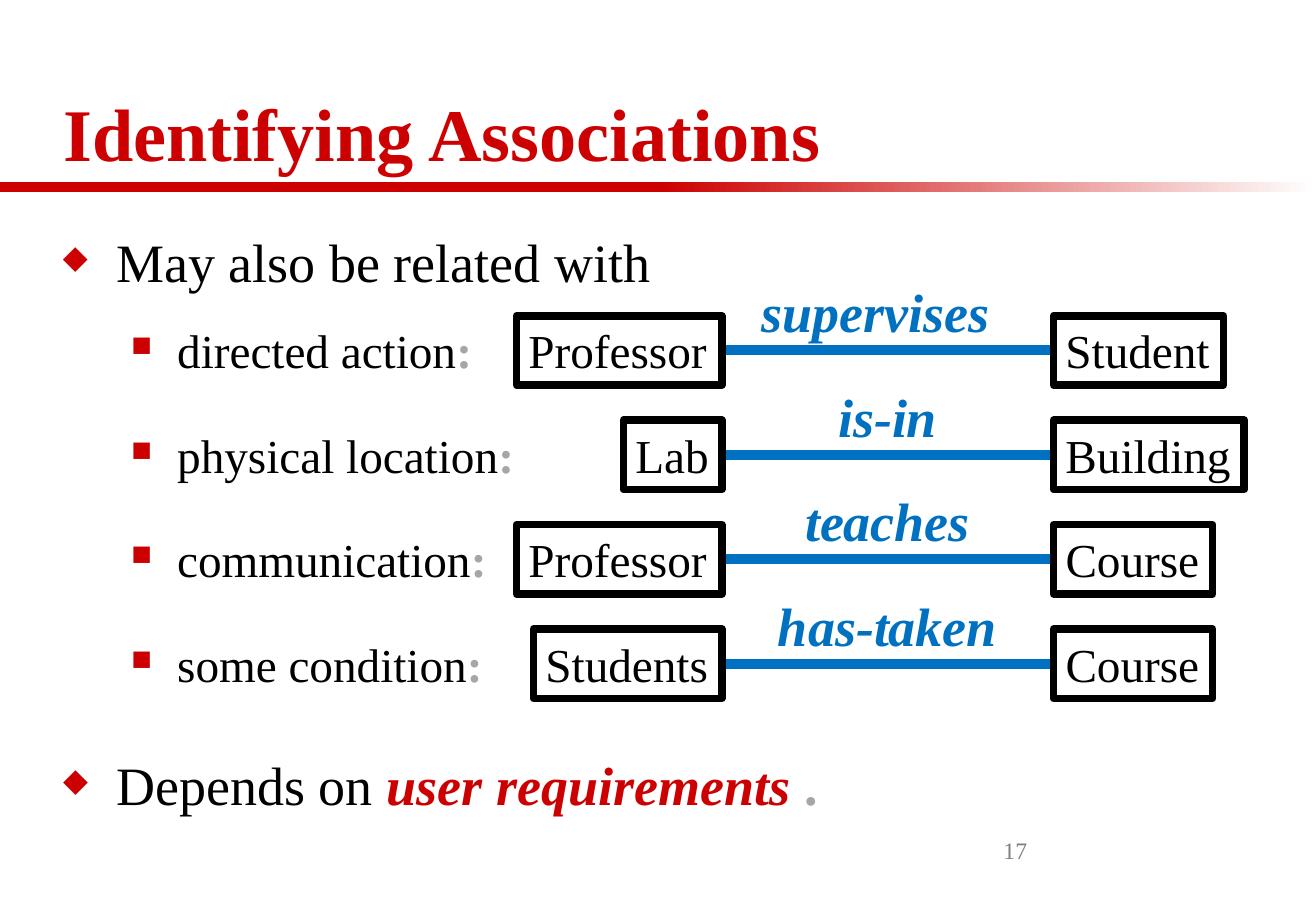
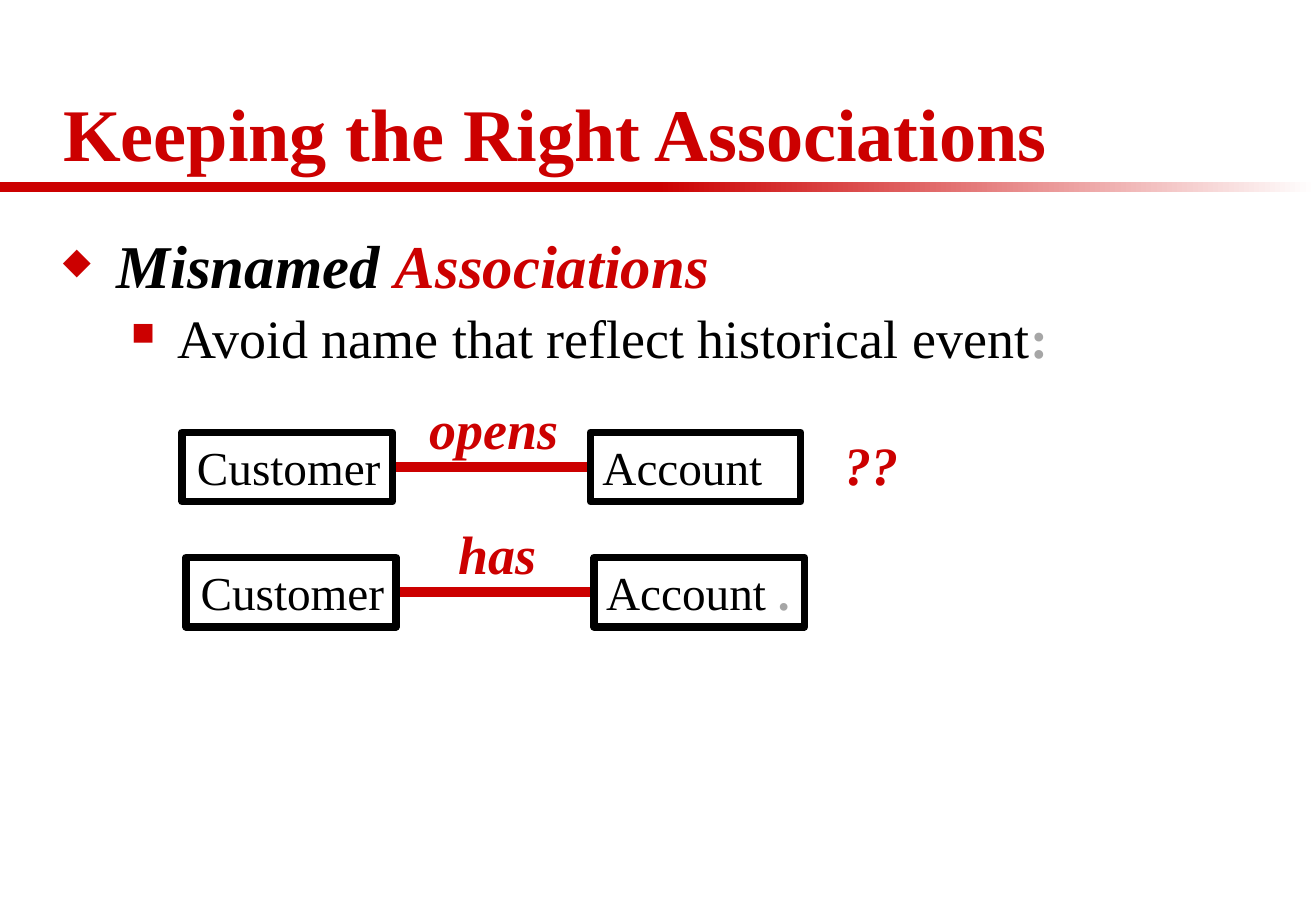
"""Build two slides on naming the associations between classes."""
from lxml.etree import SubElement as Sub
from pptx import Presentation as Deck
from pptx.dml.color import RGBColor as Rgb
from pptx.enum.shapes import MSO_CONNECTOR as Conn, MSO_SHAPE as Kind
from pptx.enum.text import MSO_ANCHOR as Anchor, MSO_AUTO_SIZE as Fit, PP_ALIGN as Align
from pptx.oxml.ns import qn
from pptx.util import Inches, Pt

W, H = 10.83, 7.5
EDGE = 0.42
RULE = H / 5
BOX_H = 0.57
TAG_H = 0.64
FONT = "Times New Roman"
HUES = {"red": "CC0000", "blue": "0070C0", "ink": "000000",
        "mute": "A6A6A6", "page": "808080", "white": "FFFFFF"}
LOOKS = {"text": ("ink", False, False), "head": ("red", True, False),
         "mark": ("mute", True, False), "page": ("page", False, False),
         "name": ("ink", True, True), "red": ("red", True, True),
         "blue": ("blue", True, True)}
MARKS = [("◆", 0.44, -0.44), ("■", 0.94, -0.38)]


def hue(key):
    return Rgb.from_string(HUES[key])


def place(*nums):
    return [Inches(n) for n in nums]


def write(para, size, runs):
    for text, look in runs:
        run = para.add_run()
        run.text = text
        font = run.font
        font.name, font.size = FONT, Pt(size)
        key, font.bold, font.italic = LOOKS[look]
        font.color.rgb = hue(key)


def label(slide, spot, size, runs, align=Align.LEFT, anchor=Anchor.TOP):
    frame = slide.shapes.add_textbox(*place(*spot)).text_frame
    frame.word_wrap = True
    frame.vertical_anchor = anchor
    para = frame.paragraphs[0]
    para.alignment = align
    write(para, size, runs)


def bullet(para, level):
    sign, left, hang = MARKS[level]
    props = para._p.get_or_add_pPr()
    props.set("marL", str(Inches(left)))
    props.set("indent", str(Inches(hang)))
    tint = Sub(props, qn("a:buClr"))
    Sub(tint, qn("a:srgbClr"), val=HUES["red"])
    Sub(props, qn("a:buSzPct"), val="60000")
    Sub(props, qn("a:buChar"), char=sign)


def points(slide, spot, items):
    frame = slide.shapes.add_textbox(*place(*spot)).text_frame
    frame.word_wrap = True
    for num, (level, size, runs) in enumerate(items):
        para = frame.add_paragraph() if num else frame.paragraphs[0]
        para.level = level
        para.space_before = Pt(size * 0.2)
        if num:
            para.line_spacing = 0.9
        bullet(para, level)
        write(para, size, runs)


def box(slide, left, top, wide, runs, align=Align.LEFT):
    shape = slide.shapes.add_shape(Kind.RECTANGLE, *place(left, top, wide, BOX_H))
    shape.shadow.inherit = False
    shape.fill.background()
    shape.line.color.rgb = hue("ink")
    shape.line.width = Pt(4.5)
    frame = shape.text_frame
    frame.word_wrap = False
    frame.auto_size = Fit.SHAPE_TO_FIT_TEXT
    frame.vertical_anchor = Anchor.TOP
    para = frame.paragraphs[0]
    para.alignment = align
    write(para, 28, runs)
    return shape


def link(slide, span, top, one, verb, two, key, align=Align.LEFT, shift=0):
    start, end = span
    mid = top + BOX_H / 2
    line = slide.shapes.add_connector(Conn.STRAIGHT, *place(start, mid, end, mid))
    line.line.color.rgb = hue(key)
    line.line.width = Pt(6)
    Sub(line.element.spPr, qn("a:effectLst"))
    (name, wide), (runs, room) = one, two
    left = box(slide, start - wide, top, wide, [(name, "text")], align)
    right = box(slide, end, top, room, runs)
    line.begin_connect(left, 3)
    line.end_connect(right, 1)
    label(slide, (start + shift, mid - TAG_H, end - start, TAG_H), 32,
          [(verb, key)], Align.CENTER)


def bands(slide, layout):
    for num in range(2):
        band = slide.shapes.add_shape(
            Kind.RECTANGLE, *place(num * W / 2, RULE, W / 2, 0.08))
        band.shadow.inherit = False
        band.line.fill.background()
        if num:
            band.fill.gradient()
            band.fill.gradient_angle = 0
            for stop, key in zip(band.fill.gradient_stops, ("red", "white")):
                stop.color.rgb = hue(key)
        else:
            band.fill.solid()
            band.fill.fore_color.rgb = hue("red")
        layout.shapes.element.append(band.element)


def start(deck, layout, text):
    slide = deck.slides.add_slide(layout)
    title = slide.shapes.title
    title.left, title.top, title.width, title.height = place(EDGE, 0.29, 10, RULE - 0.29)
    frame = title.text_frame
    frame.auto_size = Fit.NONE
    frame.vertical_anchor = Anchor.BOTTOM
    para = frame.paragraphs[0]
    para.alignment = Align.LEFT
    write(para, 44, [(text, "head")])
    return slide


def kinds(slide):
    rows = [
        ("directed action", ("Professor", 1.69), "supervises", ("Student", 1.4), -0.1),
        ("physical location", ("Lab", 0.81), "is-in", ("Building", 1.57), 0),
        ("communication", ("Professor", 1.69), "teaches", ("Course", 1.31), 0),
        ("some condition", ("Students", 1.55), "has-taken", ("Course", 1.31), 0),
    ]
    points(slide, (EDGE, 1.83, 10.16, 0.7),
           [(0, 32, [("May also be related with", "text")])])
    for num, (kind, one, verb, (name, wide), shift) in enumerate(rows):
        top = 2.6 + num * 0.86
        points(slide, (EDGE, top, 4, BOX_H),
               [(1, 28, [(kind, "text"), (":", "mark")])])
        link(slide, (5.94, 8.67), top, one, verb, ([(name, "text")], wide),
             "blue", shift=shift)
    points(slide, (EDGE, 6.14, 7.75, 0.86),
           [(0, 32, [("Depends on ", "text"), ("user requirements ", "red"),
                     (".", "mark")])])
    label(slide, (8.16, 6.75, 2.26, 0.5), 14, [("17", "page")], anchor=Anchor.MIDDLE)


def names(slide):
    points(slide, (EDGE, 1.83, 10, 1.25), [
        (0, 36, [("Misnamed ", "name"), ("Associations", "red")]),
        (1, 32, [("Avoid name that reflect historical event", "text"), (":", "mark")]),
    ])
    pairs = [("opens", [("Account", "text")]),
             ("has", [("Account ", "text"), (".", "mark")])]
    for num, (verb, runs) in enumerate(pairs):
        left = 3.23 + num * 0.03
        link(slide, (left, left + 1.63), 3.56 + num * 1.03, ("Customer", 1.73),
             verb, (runs, 1.73), "red", Align.RIGHT, 0.02)
    label(slide, (6.85, 3.5, 0.8, TAG_H), 32, [("??", "red")])


def main():
    deck = Deck()
    deck.slide_width, deck.slide_height = place(W, H)
    layout = deck.slide_layouts[5]
    first = start(deck, layout, "Identifying Associations")
    bands(first, layout)
    kinds(first)
    names(start(deck, layout, "Keeping the Right Associations"))
    deck.save("out.pptx")


if __name__ == "__main__":
    main()
